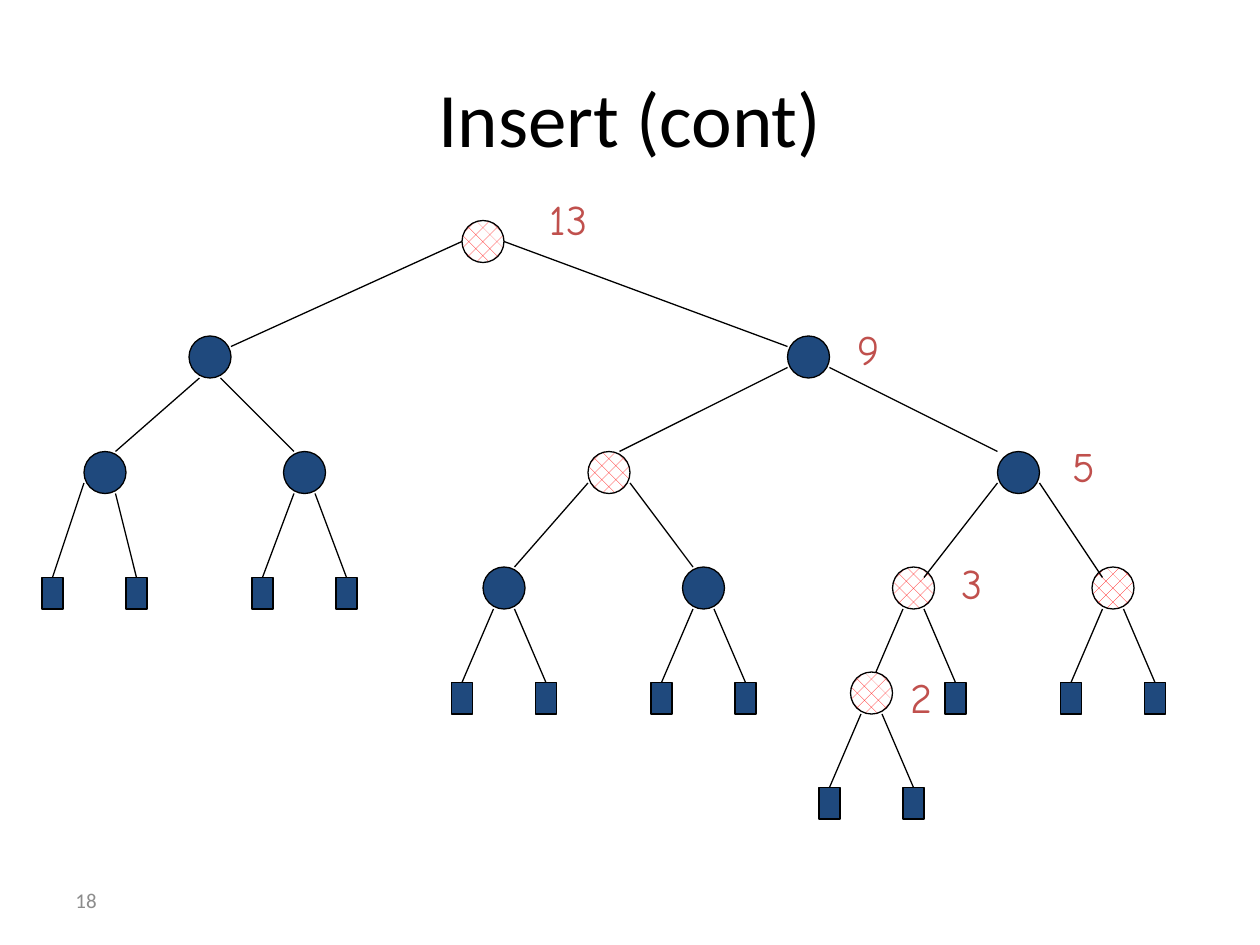
from pptx import Presentation
from pptx.dml.color import RGBColor
from pptx.enum.dml import MSO_PATTERN as Pattern
from pptx.enum.shapes import MSO_CONNECTOR as Wire, MSO_SHAPE as Kind
from pptx.enum.text import MSO_ANCHOR as Anchor, PP_ALIGN as Align
from pptx.oxml.ns import qn
from pptx.util import Emu, Pt
from lxml import etree

BLACK, BLUE, RED, WHITE = "000000", "1F497D", "FF0000", "FFFFFF"
GREY, ROSE = "8C8C8C", "C0504D"

NODES = [
    (352, 168, True), (144, 256, False), (600, 256, False),
    (448, 344, True), (760, 344, False), (368, 432, False),
    (520, 432, False), (680, 432, True), (832, 432, True),
    (64, 344, False), (216, 344, False),
]
LINKS = [
    (352, 184, 176, 264), (384, 184, 600, 264),
    (600, 280, 472, 344), (632, 280, 760, 344),
    (792, 368, 840, 440), (760, 368, 704, 440),
    (480, 368, 528, 432), (448, 368, 392, 432),
    (168, 288, 224, 344), (152, 288, 88, 344),
    (88, 376, 104, 440), (64, 368, 40, 440),
]
LABELS = [
    ("5", 797, 331, 47), ("3", 711, 420, 47), ("9", 633, 242, 47),
    ("13", 382, 143, 75), ("2", 673, 507, 47),
]


def px(n):
    return Emu(n * 9525)


def color(code):
    return RGBColor.from_string(code)


def shape(slide, kind, x, y, w, h, red=False):
    item = slide.shapes.add_shape(kind, px(x), px(y), px(w), px(h))
    item.shadow.inherit = False
    fill = item.fill
    if red:
        fill.patterned()
        fill.pattern = Pattern.PERCENT_25
        fill.fore_color.rgb = color(RED)
        fill.back_color.rgb = color(WHITE)
    else:
        fill.solid()
        fill.fore_color.rgb = color(BLUE)
    item.line.color.rgb = color(BLACK)
    item.line.width = Pt(0.75)


def node(slide, x, y, red):
    shape(slide, Kind.OVAL, x, y, 32, 32, red)


def leaf(slide, x, y):
    shape(slide, Kind.RECTANGLE, x - 8, y, 16, 24)


def link(slide, x1, y1, x2, y2):
    wire = slide.shapes.add_connector(
        Wire.STRAIGHT, px(x1), px(y1), px(x2), px(y2))
    wire.line.color.rgb = color(BLACK)
    wire.line.width = Pt(0.75)
    etree.SubElement(wire._element.spPr, qn("a:effectLst"))


def fork(slide, x, y, drop=56, leaves=(-1, 1)):
    for side in (-1, 1):
        if side in leaves:
            leaf(slide, x + side * 32, y + drop)
        link(slide, x + side * 8, y, x + side * 32, y + drop)


def text(slide, words, x, y, w, h, size, font, ink, align, anchor=Anchor.TOP):
    frame = slide.shapes.add_textbox(px(x), px(y), px(w), px(h)).text_frame
    frame.word_wrap = True
    frame.vertical_anchor = anchor
    para = frame.paragraphs[0]
    para.alignment = align
    run = para.add_run()
    run.text = words
    run.font.size = Pt(size)
    run.font.name = font
    run.font.color.rgb = color(ink)


def main():
    deck = Presentation()
    deck.slide_width, deck.slide_height = px(960), px(720)
    slide = deck.slides.add_slide(deck.slide_layouts[6])

    text(slide, "18", 48, 667, 224, 38, 12, "Calibri", GREY,
         Align.LEFT, Anchor.MIDDLE)
    text(slide, "Insert (cont)", 48, 29, 864, 120, 44, "Calibri", BLACK,
         Align.CENTER, Anchor.MIDDLE)

    for x, y, red in NODES:
        node(slide, x, y, red)
    for x in (40, 104):
        leaf(slide, x, 440)
    for ends in LINKS:
        link(slide, *ends)
    for x in (384, 536, 848):
        fork(slide, x, 464)
    fork(slide, 232, 376, drop=64)
    fork(slide, 696, 464, leaves=(1,))
    node(slide, 648, 512, True)
    fork(slide, 664, 544)

    for words, x, y, w in LABELS:
        text(slide, words, x, y, w, 48, 24, "Comic Neue", ROSE, Align.RIGHT)

    deck.save("out.pptx")


if __name__ == "__main__":
    main()
